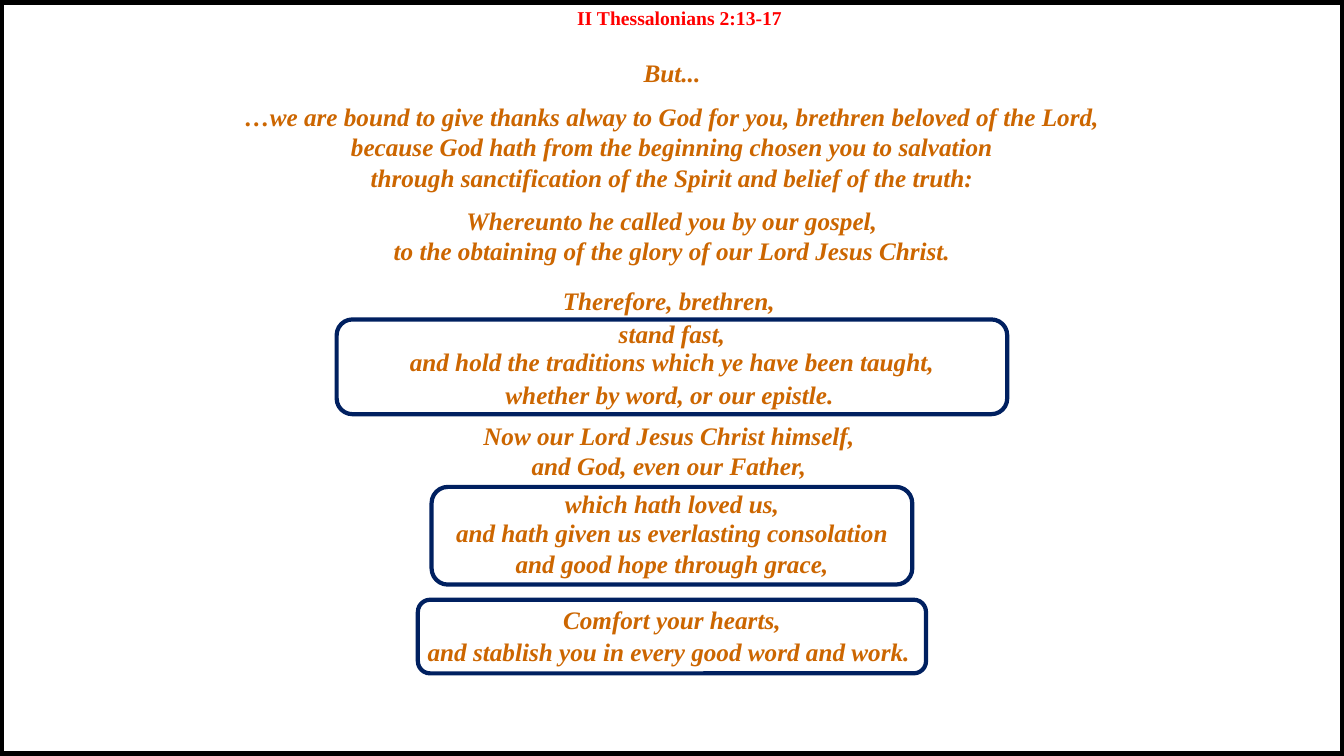
"""Build the II Thessalonians 2:13-17 scripture slide."""
from dataclasses import dataclass

from pptx import Presentation
from pptx.dml.color import RGBColor
from pptx.enum.shapes import MSO_SHAPE
from pptx.enum.text import MSO_ANCHOR, MSO_AUTO_SIZE, PP_ALIGN
from pptx.slide import Slide
from pptx.text.text import TextFrame
from pptx.util import Pt


@dataclass(frozen=True)
class Theme:
    """Colours, font and sizes of the slide."""
    font: str = "Times New Roman"
    reference_size: float = 14
    verse_size: float = 18
    reference: RGBColor = RGBColor(0xFF, 0x00, 0x00)
    verse: RGBColor = RGBColor(0xCC, 0x66, 0x00)
    border: RGBColor = RGBColor(0x00, 0x00, 0x00)
    highlight: RGBColor = RGBColor(0x00, 0x20, 0x60)
    border_width: float = 6
    highlight_width: float = 3


@dataclass(frozen=True)
class Verse:
    """A passage centred on the slide, given by top and width."""
    top: float
    width: float
    lines: tuple[str, ...]
    align: PP_ALIGN = PP_ALIGN.CENTER


@dataclass(frozen=True)
class Frame:
    """An outline centred on the slide."""
    top: float
    width: float
    height: float
    preset: MSO_SHAPE
    color: RGBColor
    weight: float


THEME = Theme()
SLIDE_WIDTH, SLIDE_HEIGHT = 960, 540
LINE_HEIGHT, PADDING = 21.8, 7.2

VERSES = (
    Verse(37.5, 654, ("But...",)),
    Verse(69, 750, (
        "…we are bound to give thanks alway to God for you, brethren beloved of the Lord,",
        "because God hath from the beginning chosen you to salvation",
        "through sanctification of the Spirit and belief of the truth:",
    )),
    Verse(143.3, 736, (
        "Whereunto he called you by our gospel,",
        "to the obtaining of the glory of our Lord Jesus Christ.",
    )),
    Verse(200.2, 718, ("Therefore, brethren, ",)),
    Verse(223.9, 133, ("stand fast,",)),
    Verse(244.1, 487, ("and hold the traditions which ye have been taught,",)),
    Verse(267.1, 252, ("whether by word, or our epistle.",), PP_ALIGN.LEFT),
    Verse(296.6, 766, (
        "Now our Lord Jesus Christ himself, ",
        "and God, even our Father, ",
    )),
    Verse(344.9, 578, ("which hath loved us,",)),
    Verse(365.8, 571, ("and hath given us everlasting consolation",)),
    Verse(388.1, 553, ("and good hope through grace,",)),
    Verse(428.4, 509, ("Comfort your hearts,",)),
    Verse(450.7, 501, ("and stablish you in every good word and work. ",)),
)


def highlight(top: float, width: float, height: float) -> Frame:
    """Describe a rounded frame around key words."""
    return Frame(top, width, height, MSO_SHAPE.ROUNDED_RECTANGLE,
                 THEME.highlight, THEME.highlight_width)


BORDER = Frame(0.7, SLIDE_WIDTH, 538.6, MSO_SHAPE.RECTANGLE, THEME.border, THEME.border_width)
HIGHLIGHTS = (
    highlight(228.2, 479, 67.7),
    highlight(347.8, 343.4, 69.8),
    highlight(428.4, 363, 52.6),
)


def centred_left(width: float) -> float:
    """Return the left edge that centres a width on the slide."""
    return (SLIDE_WIDTH - width) / 2


def write_lines(text: TextFrame, lines: tuple[str, ...], align: PP_ALIGN,
                size: float, color: RGBColor, italic: bool) -> None:
    """Write each line as a bold paragraph."""
    text.vertical_anchor = MSO_ANCHOR.TOP
    for index, line in enumerate(lines):
        paragraph = text.add_paragraph() if index else text.paragraphs[0]
        paragraph.alignment = align
        run = paragraph.add_run()
        run.text = line
        run.font.name = THEME.font
        run.font.size = Pt(size)
        run.font.bold = True
        run.font.italic = italic
        run.font.color.rgb = color


def draw_frame(slide: Slide, frame: Frame) -> None:
    """Draw an unfilled outline."""
    outline = slide.shapes.add_shape(
        frame.preset, Pt(centred_left(frame.width)), Pt(frame.top),
        Pt(frame.width), Pt(frame.height))
    outline.shadow.inherit = False
    outline.fill.background()
    outline.line.color.rgb = frame.color
    outline.line.width = Pt(frame.weight)


def draw_verse(slide: Slide, verse: Verse) -> None:
    """Draw one passage of scripture."""
    height = LINE_HEIGHT * len(verse.lines) + PADDING
    passage = slide.shapes.add_textbox(
        Pt(centred_left(verse.width)), Pt(verse.top), Pt(verse.width), Pt(height))
    passage.text_frame.word_wrap = True
    passage.text_frame.auto_size = MSO_AUTO_SIZE.SHAPE_TO_FIT_TEXT
    write_lines(passage.text_frame, verse.lines, verse.align,
                THEME.verse_size, THEME.verse, italic=True)


def draw_reference(slide: Slide) -> None:
    """Place the scripture reference in the title."""
    reference = slide.shapes.title
    reference.left, reference.top = Pt(405), Pt(0.7)
    reference.width, reference.height = Pt(182), Pt(24.2)
    reference.text_frame.word_wrap = False
    reference.text_frame.auto_size = MSO_AUTO_SIZE.NONE
    write_lines(reference.text_frame, ("II Thessalonians 2:13-17",), PP_ALIGN.LEFT,
                THEME.reference_size, THEME.reference, italic=False)


def main() -> None:
    """Build and save the presentation."""
    presentation = Presentation()
    presentation.slide_width = Pt(SLIDE_WIDTH)
    presentation.slide_height = Pt(SLIDE_HEIGHT)
    slide = presentation.slides.add_slide(presentation.slide_layouts.get_by_name("Title Only"))
    draw_frame(slide, BORDER)
    draw_reference(slide)
    for verse in VERSES:
        draw_verse(slide, verse)
    for frame in HIGHLIGHTS:
        draw_frame(slide, frame)
    presentation.save("out.pptx")


if __name__ == "__main__":
    main()
